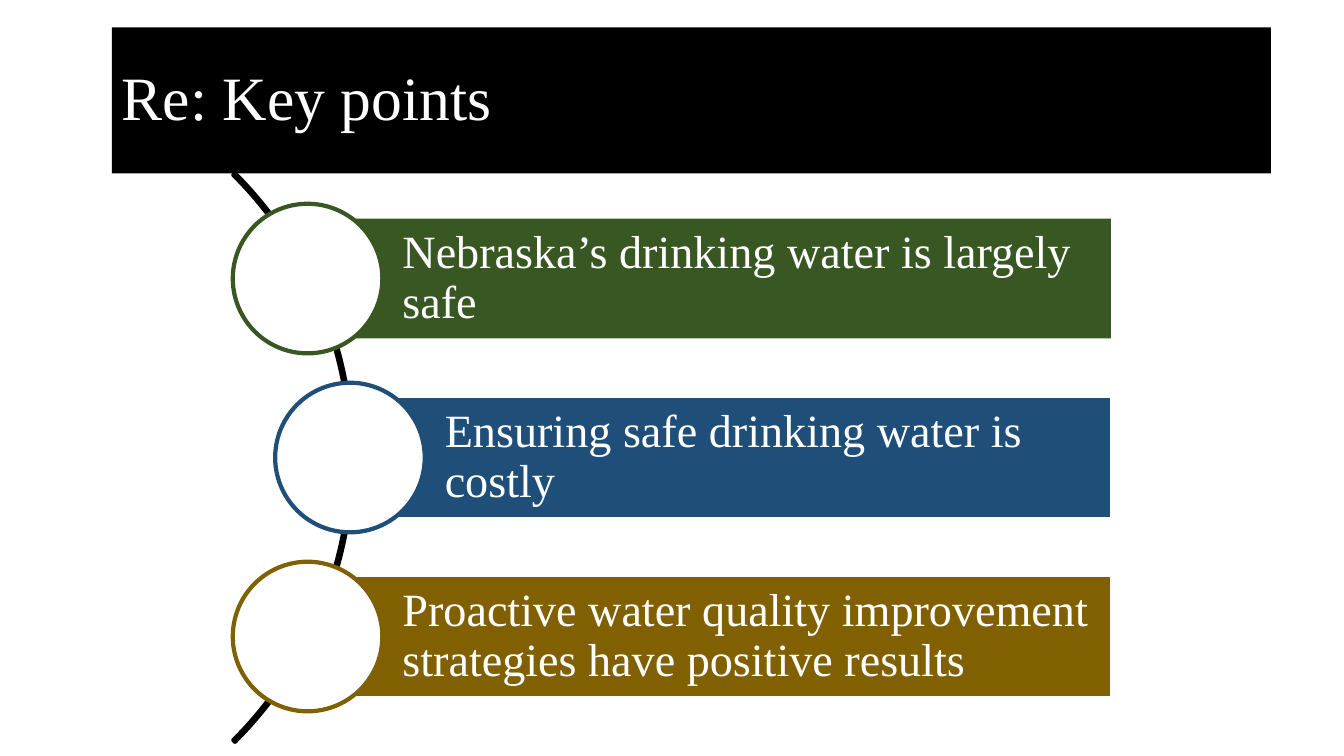
import math

import pptx
import pptx.util
from pptx.dml.color import RGBColor
from pptx.enum.shapes import MSO_SHAPE
from pptx.enum.text import MSO_ANCHOR, MSO_AUTO_SIZE, PP_ALIGN

Cm, Pt = pptx.util.Cm, pptx.util.Pt

TITLE = "Re: Key points"
POINTS = [  # text, colour, bar outline
    ("Nebraska’s drinking water is largely safe", "385723", None),
    ("Ensuring safe drinking water is costly", "1F4E79", "FFFFFF"),
    ("Proactive water quality improvement strategies have positive results",
     "806000", "FFFFFF"),
]
FONT = "Times New Roman"

# Lengths in centimetres
ARC_X, ARC_Y, ARC_R = -1.24, 11.53, 10.13
ORBIT_R = 10.06  # circle centres lie just inside the arc
PITCH = 4.51
CIRCLE_D = 3.77
BAR_H, BAR_RIGHT = 3.02, 28.0


def rgb(color):
    return RGBColor.from_string(color)


def add_shape(slide, kind, box, fill=None, line=None, width=1):
    sp = slide.shapes.add_shape(kind, *(Cm(v) for v in box))
    sp.shadow.inherit = False
    if fill:
        sp.fill.solid()
        sp.fill.fore_color.rgb = rgb(fill)
    else:
        sp.fill.background()
    if line:
        sp.line.color.rgb = rgb(line)
        sp.line.width = Pt(width)
    else:
        sp.line.fill.background()
    return sp


def write(sp, text, size, color="FFFFFF", left=0.25):
    """Fill a shape with one left-aligned, vertically centred paragraph."""
    tf = sp.text_frame
    tf.word_wrap = True
    tf.auto_size = MSO_AUTO_SIZE.NONE
    tf.vertical_anchor = MSO_ANCHOR.MIDDLE
    tf.margin_left, tf.margin_right = Cm(left), Cm(0.23)
    p = tf.paragraphs[0]
    p.alignment = PP_ALIGN.LEFT
    p.line_spacing = 0.9
    r = p.add_run()
    r.text = text
    r.font.name = FONT
    r.font.size = Pt(size)
    r.font.color.rgb = rgb(color)


def add_arc(slide):
    arc = add_shape(slide, MSO_SHAPE.BLOCK_ARC,
                    (ARC_X - ARC_R, ARC_Y - ARC_R, 2 * ARC_R, 2 * ARC_R),
                    line="000000", width=3)
    for i, value in enumerate((189, 27, 0.003)):
        arc.adjustments[i] = value


def add_point(slide, i, text, color, outline):
    dy = (i - (len(POINTS) - 1) / 2) * PITCH
    x, y = ARC_X + math.sqrt(ORBIT_R ** 2 - dy ** 2), ARC_Y + dy
    bar = add_shape(slide, MSO_SHAPE.RECTANGLE,
                    (x, y - BAR_H / 2, BAR_RIGHT - x, BAR_H), color, outline)
    write(bar, text, 33, left=2.39)
    add_shape(slide, MSO_SHAPE.OVAL,
              (x - CIRCLE_D / 2, y - CIRCLE_D / 2, CIRCLE_D, CIRCLE_D),
              "FFFFFF", color, 3)


def add_title(slide):
    title = slide.shapes.title
    title.left, title.top = Cm(2.82), Cm(0.69)
    title.width, title.height = Cm(29.21), Cm(3.68)
    title.fill.solid()
    title.fill.fore_color.rgb = rgb("000000")
    write(title, TITLE, 44)
    slide.shapes._spTree.append(title._element)  # in front of the arc


def main():
    prs = pptx.Presentation()
    prs.slide_width, prs.slide_height = Cm(33.87), Cm(19.05)
    slide = prs.slides.add_slide(prs.slide_layouts[5])
    add_arc(slide)
    for i, point in enumerate(POINTS):
        add_point(slide, i, *point)
    add_title(slide)
    prs.save("out.pptx")


if __name__ == "__main__":
    main()
